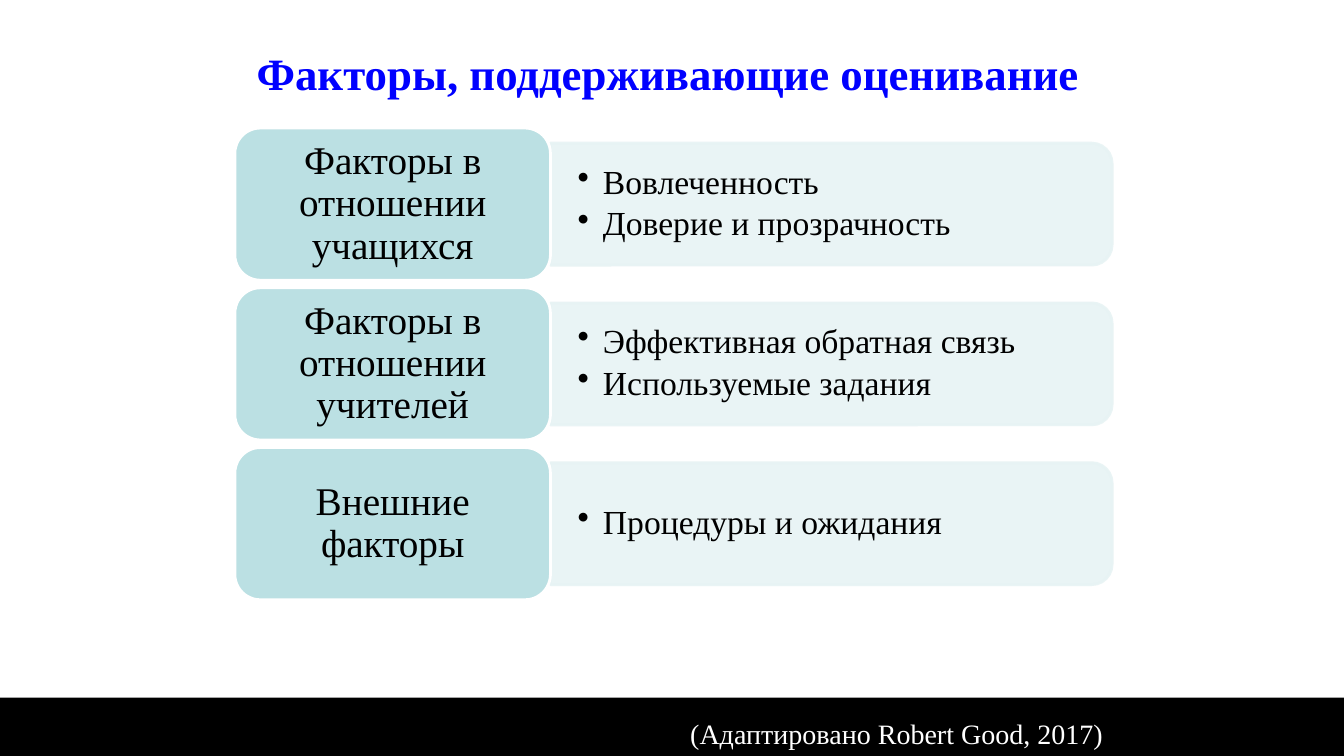
from lxml import etree
from pptx import Presentation
from pptx.dml.color import RGBColor
from pptx.enum.shapes import MSO_SHAPE
from pptx.enum.text import MSO_ANCHOR, PP_ALIGN
from pptx.oxml.ns import qn
from pptx.util import Inches, Pt

RECT = MSO_SHAPE.RECTANGLE
ROUNDED = MSO_SHAPE.ROUNDED_RECTANGLE
TOP_ROUNDED = MSO_SHAPE.ROUND_2_SAME_RECTANGLE
LEFT, CENTER, RIGHT = PP_ALIGN.LEFT, PP_ALIGN.CENTER, PP_ALIGN.RIGHT
TOP, MIDDLE = MSO_ANCHOR.TOP, MSO_ANCHOR.MIDDLE

FACTORS = [
    ("Факторы в отношении учащихся", ["Вовлеченность", "Доверие и прозрачность"]),
    ("Факторы в отношении учителей", ["Эффективная обратная связь", "Используемые задания"]),
    ("Внешние факторы", ["Процедуры и ожидания"]),
]
FIRST_TOP, ROW_STEP = 1.27, 1.585
LABEL_W, LABEL_H = 3.13, 1.51
PANEL_LEFT, PANEL_W, PANEL_H = 5.46, 5.57, 1.21


def rgb(color):
    return RGBColor.from_string(color)


def add_bullet(p, indent):
    """Give the paragraph a round bullet with a hanging indent in inches."""
    pPr = p._p.get_or_add_pPr()
    pPr.set("marL", str(Inches(indent)))
    pPr.set("indent", str(-Inches(indent)))
    etree.SubElement(pPr, qn("a:buChar")).set("char", "•")


def set_alpha(sp, percent):
    """Make the fill and the line of a shape partly transparent."""
    for clr in sp._element.spPr.iter(qn("a:srgbClr")):
        etree.SubElement(clr, qn("a:alpha")).set("val", str(percent * 1000))


def write(sp, lines, size=24, color="000000", bold=False, align=LEFT, anchor=MIDDLE,
          inset=(0.1, 0.05), spacing=None, after=None, bullet=False, wrap=True,
          font="Times New Roman"):
    tf = sp.text_frame
    tf.word_wrap = wrap
    tf.vertical_anchor = anchor
    tf.margin_left = tf.margin_right = Inches(inset[0])
    tf.margin_top = tf.margin_bottom = Inches(inset[1])
    for i, line in enumerate(lines):
        p = tf.add_paragraph() if i else tf.paragraphs[0]
        p.alignment = align
        if spacing:
            p.line_spacing = spacing
        if after:
            p.space_after = Pt(after)
        if bullet:
            add_bullet(p, 0.25)
        r = p.add_run()
        r.text = line
        r.font.name = font
        r.font.size = Pt(size)
        r.font.bold = bold
        r.font.color.rgb = rgb(color)


class Deck:
    def __init__(self, width, height):
        self.prs = Presentation()
        self.prs.slide_width, self.prs.slide_height = Inches(width), Inches(height)
        self.s = self.prs.slides.add_slide(self.prs.slide_layouts[6])

    def shape(self, kind, left, top, width, height, fill, line=None):
        sp = self.s.shapes.add_shape(kind, Inches(left), Inches(top), Inches(width), Inches(height))
        sp.shadow.inherit = False
        sp.fill.solid()
        sp.fill.fore_color.rgb = rgb(fill)
        if line:
            sp.line.color.rgb = rgb(line)
            sp.line.width = Pt(2)
        else:
            sp.line.fill.background()
        return sp

    def text(self, left, top, width, height, lines, **style):
        sp = self.s.shapes.add_textbox(Inches(left), Inches(top), Inches(width), Inches(height))
        write(sp, lines, **style)

    def panel(self, left, top, width, height, color):
        """Add a panel rounded on its right side: a top-rounded shape turned by 90°."""
        shift = (width - height) / 2
        sp = self.shape(TOP_ROUNDED, left + shift, top - shift, height, width, color, color)
        sp.rotation = 90
        set_alpha(sp, 90)

    def factor(self, top, label, points):
        self.panel(PANEL_LEFT, top + (LABEL_H - PANEL_H) / 2, PANEL_W, PANEL_H, "E7F3F4")
        self.text(PANEL_LEFT, top + 0.21, 5.51, 1.09, points, inset=(0.27, 0.14),
                  spacing=0.9, after=4, bullet=True)
        sp = self.shape(ROUNDED, PANEL_LEFT - LABEL_W, top, LABEL_W, LABEL_H, "BBE0E3", "FFFFFF")
        write(sp, [label], size=28, align=CENTER, inset=(0.12, 0.06), spacing=0.9)


def main():
    deck = Deck(13.33, 7.5)
    deck.shape(RECT, 0, 6.92, 13.33, 0.58, "000000")
    deck.text(1.75, 0.17, 9.75, 1.11, ["Факторы, поддерживающие оценивание"],
              size=32, color="0000FF", bold=True, align=CENTER)
    for i, (label, points) in enumerate(FACTORS):
        deck.factor(FIRST_TOP + i * ROW_STEP, label, points)
    deck.text(6.2, 7.06, 4.84, 0.44, ["(Адаптировано Robert Good, 2017)"],
              size=20, color="FFFFFF", align=RIGHT, anchor=TOP, wrap=False)
    deck.prs.save("out.pptx")


if __name__ == "__main__":
    main()
